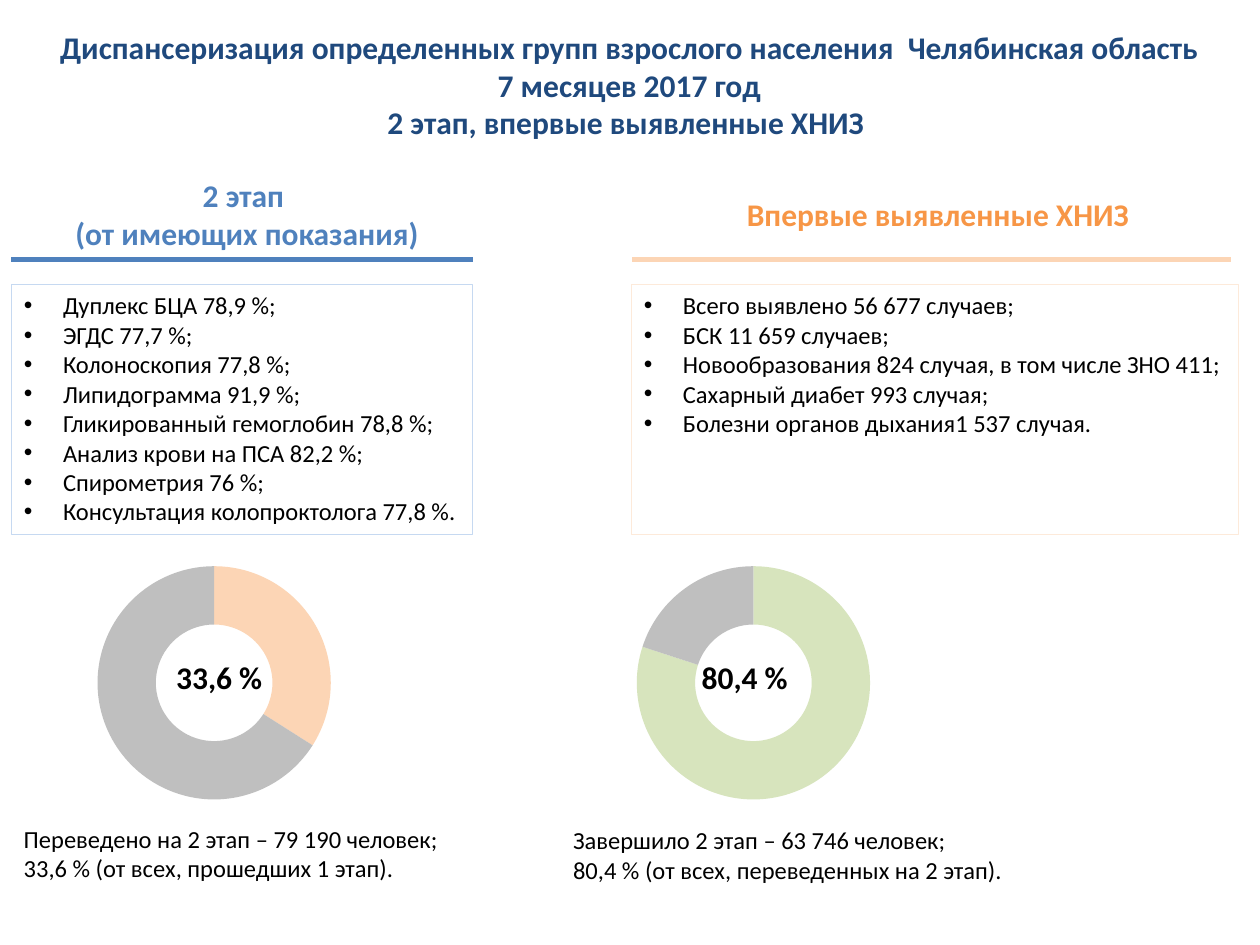
from dataclasses import dataclass

from lxml import etree
from pptx import Presentation
from pptx.chart.data import CategoryChartData
from pptx.dml.color import RGBColor
from pptx.enum.chart import XL_CHART_TYPE
from pptx.enum.shapes import MSO_CONNECTOR
from pptx.enum.text import MSO_ANCHOR, MSO_AUTO_SIZE, PP_ALIGN
from pptx.oxml import parse_xml
from pptx.oxml.ns import nsdecls, qn
from pptx.util import Inches, Pt

DOUGHNUT = XL_CHART_TYPE.DOUGHNUT
STRAIGHT = MSO_CONNECTOR.STRAIGHT
TOP = MSO_ANCHOR.TOP
NO_FIT = MSO_AUTO_SIZE.NONE
LEFT, CENTER = PP_ALIGN.LEFT, PP_ALIGN.CENTER

COMPARISON_LAYOUT = 4
CELL = 0.1  # the slide is a grid of 100 columns by 75 rows
INDENT = Inches(0.31)


@dataclass(frozen=True)
class Theme:
    font: str = "Calibri"
    heading: int = 18
    body: int = 14
    navy: str = "1F497D"
    blue: str = "4F81BD"
    pale_blue: str = "C6D9F1"
    orange: str = "F79646"
    peach: str = "FCD5B5"
    pale_peach: str = "FDEADA"
    green: str = "D7E4BD"
    gray: str = "BFBFBF"
    black: str = "000000"


THEME = Theme()

TITLE = [
    "Диспансеризация определенных групп взрослого населения  Челябинская область",
    "7 месяцев 2017 год",
    "2 этап, впервые выявленные ХНИЗ ",
]

# Areas are (column, row, columns wide, rows high)
PANELS = [
    dict(
        heading=["2 этап ", "(от имеющих показания)"],
        heading_area=(4.2, 13.5, 30.8, 7.1), color=THEME.blue,
        rule=(0.9, 37.5), rule_color=THEME.blue,
        items=[
            "Дуплекс БЦА 78,9 %;",
            "ЭГДС 77,7 %;",
            "Колоноскопия 77,8 %;",
            "Липидограмма 91,9 %;",
            "Гликированный гемоглобин 78,8 %;",
            "Анализ крови на ПСА 82,2 %;",
            "Спирометрия 76 %;",
            "Консультация колопроктолога 77,8 %.",
        ],
        list_area=(0.9, 22.55, 36.6, 19.9), border=THEME.pale_blue,
        share=34, slice_color=THEME.peach, chart_column=2.8,
        label="33,6 %", label_column=13,
        caption=["Переведено на 2 этап – 79 190 человек;",
                 "33,6 % (от всех, прошедших 1 этап)."],
        caption_area=(0.9, 64.9, 35.6, 5.7),
    ),
    dict(
        heading=["Впервые выявленные ХНИЗ"],
        heading_area=(58, 15, 32.9, 4), color=THEME.orange,
        rule=(50.2, 97.7), rule_color=THEME.peach,
        items=[
            "Всего выявлено 56 677 случаев;",
            "БСК 11 659 случаев;",
            "Новообразования 824 случая, в том числе ЗНО 411;",
            "Сахарный диабет 993 случая;",
            "Болезни органов дыхания1 537 случая.",
        ],
        list_area=(50.1, 22.55, 48.2, 19.9), border=THEME.pale_peach,
        share=80, slice_color=THEME.green, chart_column=45.6,
        label="80,4 %", label_column=54.7,
        caption=["Завершило 2 этап – 63 746 человек;",
                 "80,4 % (от всех, переведенных на 2 этап)."],
        caption_area=(44.5, 65, 36.4, 5.7),
    ),
]


def grid(*cells):
    return [Inches(cell * CELL) for cell in cells]


def rgb(color):
    return RGBColor.from_string(color)


def move(box, area):
    box.left, box.top, box.width, box.height = grid(*area)


def add_bullet(para):
    props = para._p.get_or_add_pPr()
    props.set("marL", str(INDENT))
    props.set("indent", str(-INDENT))
    etree.SubElement(props, qn("a:buFont")).set("typeface", "Arial")
    etree.SubElement(props, qn("a:buChar")).set("char", "•")


def remove_bullet(para):
    props = para._p.get_or_add_pPr()
    props.set("marL", "0")
    props.set("indent", "0")
    etree.SubElement(props, qn("a:buNone"))


def write(box, lines, size=THEME.body, color=THEME.black, bold=False,
          align=LEFT, bullets=False, wrap=True):
    frame = box.text_frame
    frame.word_wrap = wrap
    frame.auto_size = NO_FIT
    frame.vertical_anchor = TOP
    frame.margin_right = Inches(0.05) if bullets else Inches(0.1)
    for number, line in enumerate(lines):
        para = frame.add_paragraph() if number else frame.paragraphs[0]
        para.alignment = align
        para.space_before = Pt(0)
        if bullets:
            add_bullet(para)
        else:
            remove_bullet(para)
        span = para.add_run()
        span.text = line
        span.font.name = THEME.font
        span.font.size = Pt(size)
        span.font.bold = bold
        span.font.color.rgb = rgb(color)


def add_text(page, area, lines, **style):
    write(page.shapes.add_textbox(*grid(*area)), lines, **style)


def add_rule(page, start, end, row, color):
    rule = page.shapes.add_connector(STRAIGHT, *grid(start, row, end, row))
    rule.line.color.rgb = rgb(color)
    rule.line.width = Pt(3)
    etree.SubElement(rule._element.spPr, qn("a:effectLst"))


def add_doughnut(page, area, share, color):
    data = CategoryChartData()
    data.categories = ["1", "2"]
    data.add_series("Series 1", [share, 100 - share])
    chart = page.shapes.add_chart(DOUGHNUT, *grid(*area), data).chart
    chart.has_legend = False
    chart.has_title = False
    chart.font.name = THEME.font
    chart.font.size = Pt(THEME.heading)
    chart.font.color.rgb = rgb(THEME.black)
    plot = chart.plots[0]
    plot.vary_by_categories = True
    for number, fill_color in enumerate([color, THEME.gray]):
        point = plot.series[0].points[number].format
        point.fill.solid()
        point.fill.fore_color.rgb = rgb(fill_color)
        point.line.fill.background()
    plot._element.find(qn("c:holeSize")).set("val", "71")

    # Centre a round plot area within the frame
    high = 0.87
    wide = high * area[3] / area[2]
    sizes = dict(x=(1 - wide) / 2, y=(1 - high) / 2, w=wide, h=high)
    values = "".join(f'<c:{key} val="{size:.3f}"/>' for key, size in sizes.items())
    layout = parse_xml(
        f'<c:layout {nsdecls("c")}><c:manualLayout><c:layoutTarget val="inner"/>'
        f'<c:xMode val="edge"/><c:yMode val="edge"/>{values}'
        "</c:manualLayout></c:layout>")
    plot_area = chart._chartSpace.chart.plotArea
    for old in plot_area.findall(qn("c:layout")):
        plot_area.remove(old)
    plot_area.insert(0, layout)


def add_panel(page, panel, heading, listing):
    # Heading with its rule
    move(heading, panel["heading_area"])
    write(heading, panel["heading"], size=THEME.heading, color=panel["color"],
          bold=True, align=CENTER)
    add_rule(page, *panel["rule"], 20.6, panel["rule_color"])

    # Framed list
    move(listing, panel["list_area"])
    listing.line.color.rgb = rgb(panel["border"])
    listing.line.width = Pt(0.75)
    write(listing, panel["items"], bullets=True)

    # Doughnut, its label and its caption
    add_doughnut(page, (panel["chart_column"], 43.55, 28.4, 21.3),
                 panel["share"], panel["slice_color"])
    add_text(page, (panel["label_column"], 51.7, 8.9, 4), [panel["label"]],
             size=THEME.heading, bold=True, wrap=False)
    add_text(page, panel["caption_area"], panel["caption"], wrap=False)


def main():
    deck = Presentation()
    deck.slide_width, deck.slide_height = grid(100, 75)
    page = deck.slides.add_slide(deck.slide_layouts[COMPARISON_LAYOUT])
    title, *boxes = page.placeholders
    move(title, (-0.1, 1.7, 100.1, 10.1))
    write(title, TITLE, size=THEME.heading, color=THEME.navy, bold=True, align=CENTER)
    for panel, heading, listing in zip(PANELS, boxes[::2], boxes[1::2]):
        add_panel(page, panel, heading, listing)
    deck.save("out.pptx")


if __name__ == "__main__":
    main()
